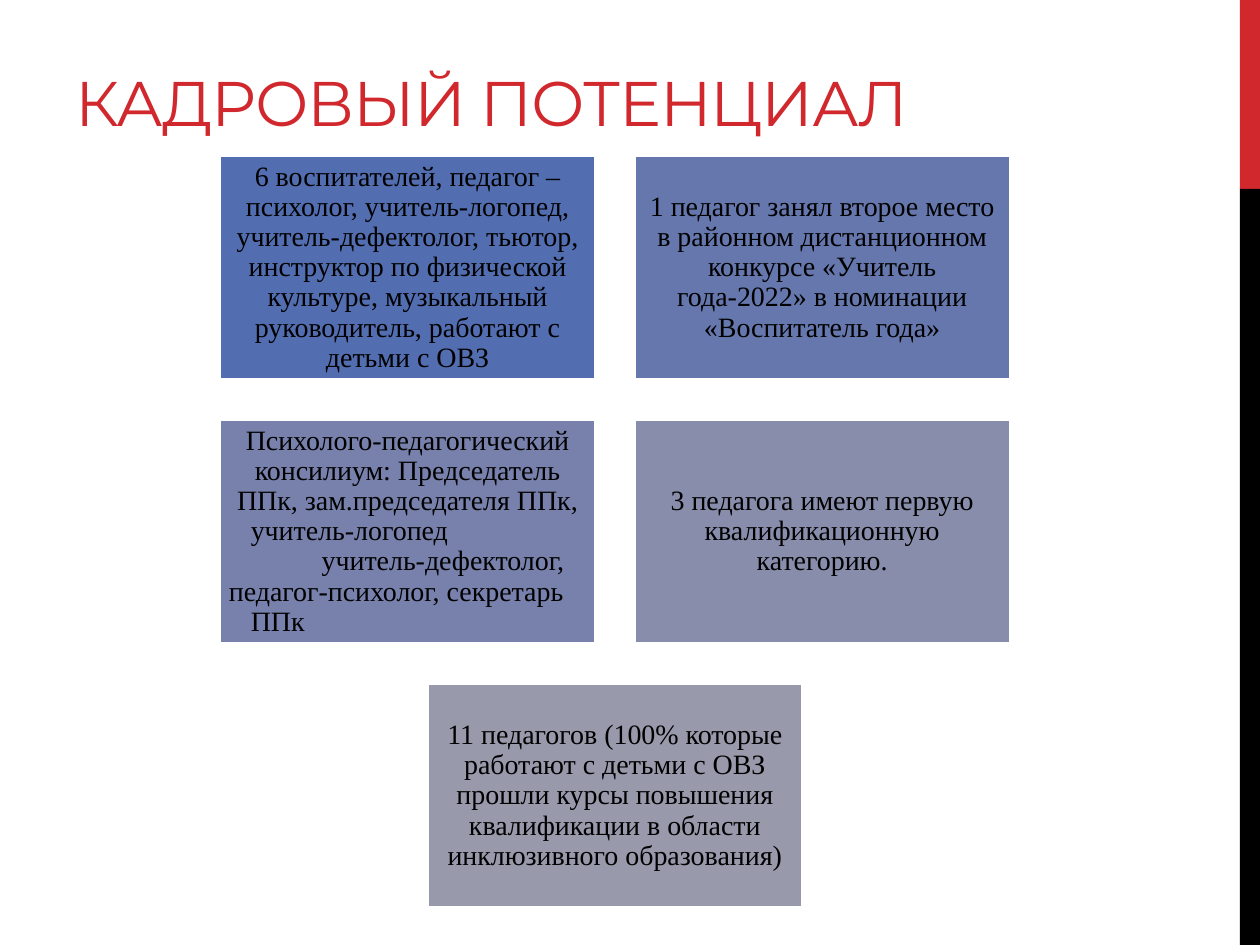
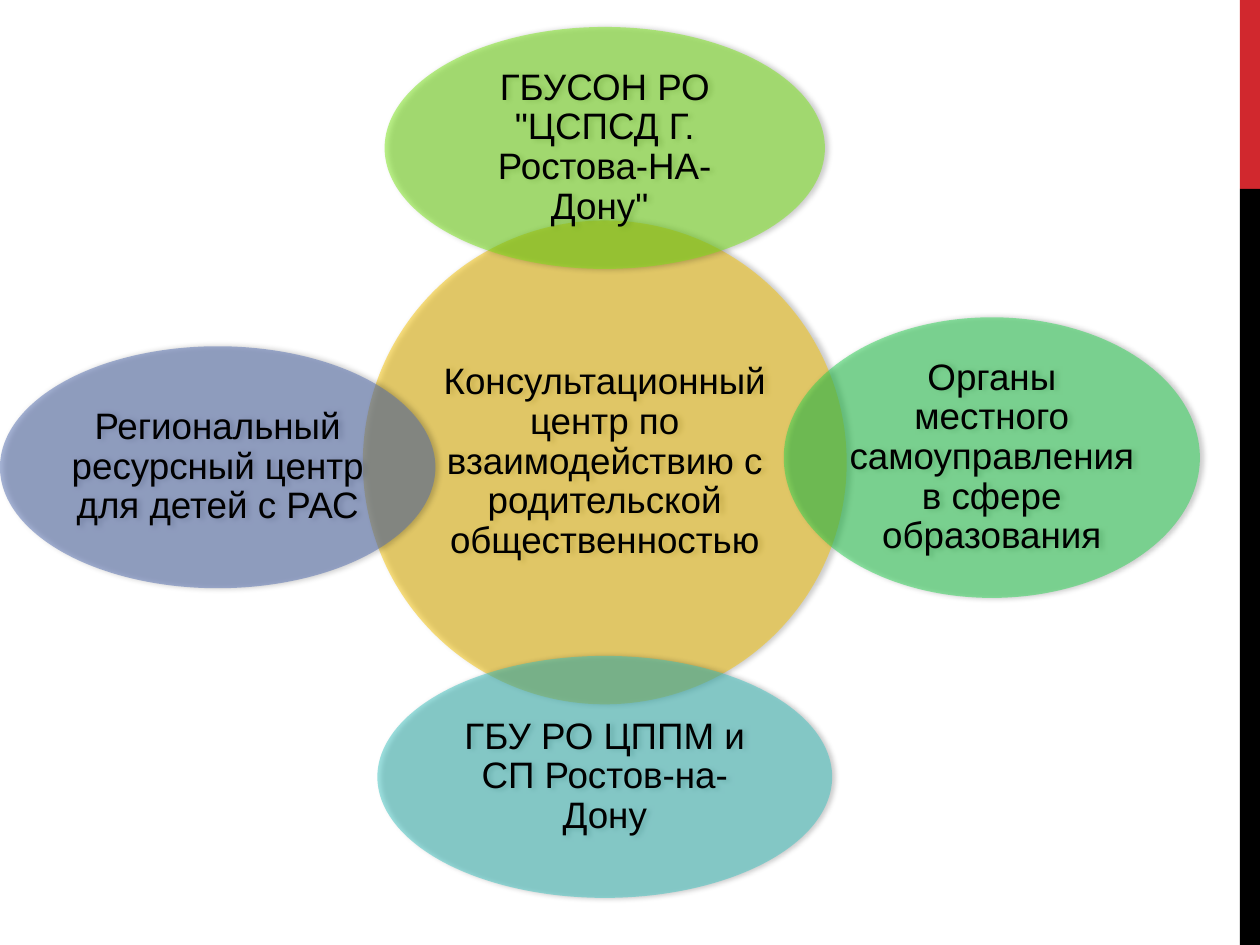
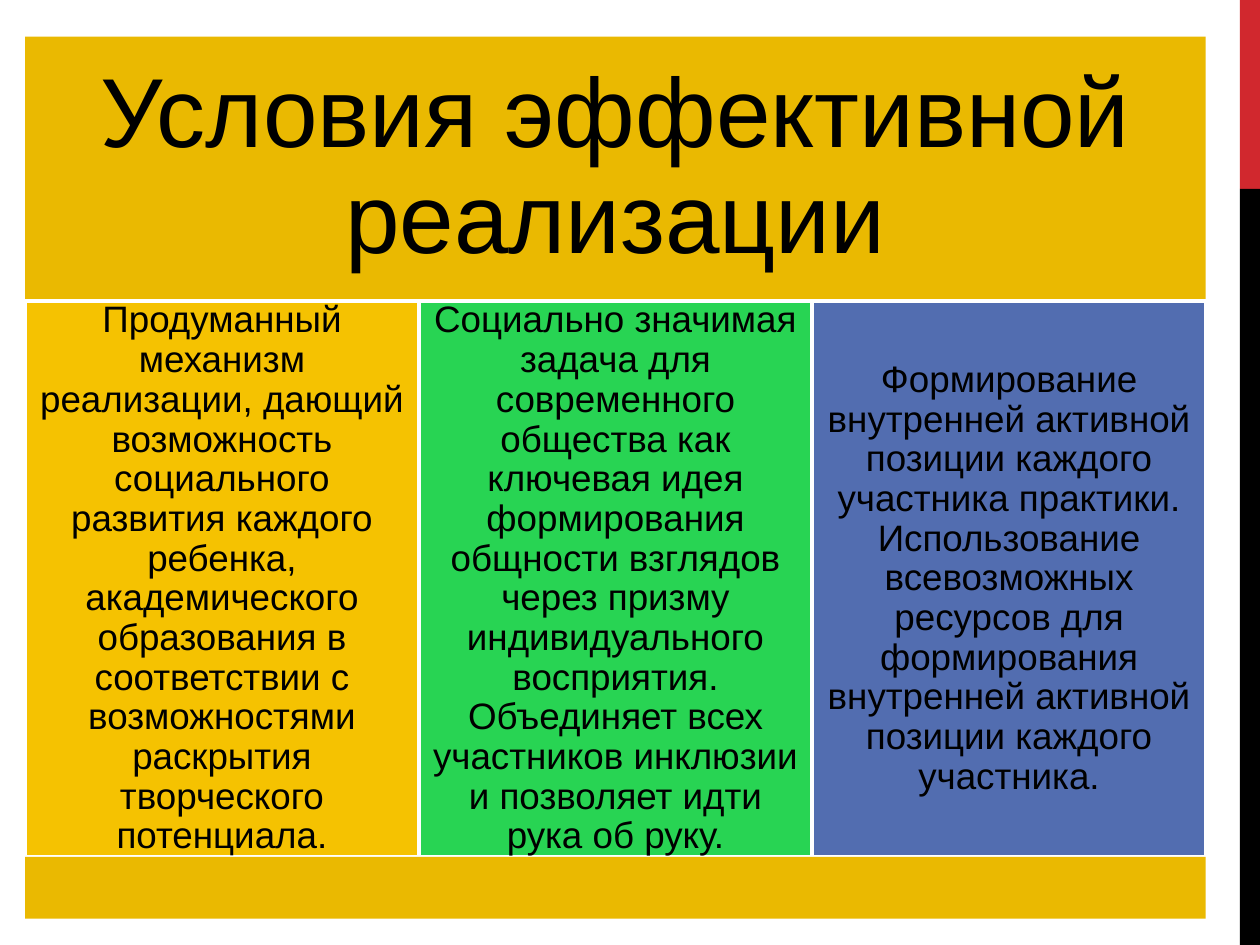
from dataclasses import dataclass

from lxml import etree
from pptx import Presentation
from pptx.dml.color import RGBColor
from pptx.enum.shapes import MSO_SHAPE
from pptx.enum.text import MSO_ANCHOR, PP_ALIGN
from pptx.oxml.ns import qn
from pptx.util import Inches, Pt

RECTANGLE, OVAL = MSO_SHAPE.RECTANGLE, MSO_SHAPE.OVAL
MIDDLE, BOTTOM = MSO_ANCHOR.MIDDLE, MSO_ANCHOR.BOTTOM
CENTER, LEFT, RIGHT = PP_ALIGN.CENTER, PP_ALIGN.LEFT, PP_ALIGN.RIGHT

RED = RGBColor(0xD1, 0x28, 0x2E)
BLACK = RGBColor(0x00, 0x00, 0x00)
WHITE = RGBColor(0xFF, 0xFF, 0xFF)
GOLD = RGBColor(0xF5, 0xC2, 0x01)
DARK_GOLD = RGBColor(0xEA, 0xB9, 0x01)
LIME = RGBColor(0x78, 0xE5, 0x14)
GREEN = RGBColor(0x28, 0xD4, 0x53)
TEAL = RGBColor(0x3C, 0xC3, 0xC0)
BLUE = RGBColor(0x52, 0x6D, 0xB0)
BLUE_2 = RGBColor(0x65, 0x77, 0xAD)
BLUE_3 = RGBColor(0x77, 0x81, 0xAC)
BLUE_4 = RGBColor(0x88, 0x8D, 0xAB)
BLUE_5 = RGBColor(0x98, 0x9A, 0xAC)

TITLE_FONT, CARD_FONT, BODY_FONT = "Montserrat", "Times New Roman", "Arial"
SIDE_INDENT = 0.18


@dataclass
class Box:
    left: float
    top: float
    width: float
    height: float

    def share(self, x, y, width, height):
        return Box(self.left + x * self.width, self.top + y * self.height,
                   width * self.width, height * self.height)

    def lengths(self):
        return [Inches(v) for v in (self.left, self.top, self.width, self.height)]


PAGE = Box(0, 0, 10, 7.5)

STAFF_CARDS = [
    (0, 0, BLUE, [("6 воспитателей, педагог –психолог, учитель-логопед, "
                   "учитель-дефектолог, тьютор, инструктор по физической культуре, "
                   "музыкальный руководитель, работают с детьми с ОВЗ", CENTER)]),
    (1, 0, BLUE_2, [("1 педагог занял второе место в районном дистанционном конкурсе "
                     "«Учитель года-2022» в номинации «Воспитатель года»", CENTER)]),
    (0, 1, BLUE_3, [("Психолого-педагогический консилиум: Председатель ППк, "
                     "зам.председателя ППк,", CENTER),
                    ("учитель-логопед", LEFT),
                    ("учитель-дефектолог,", RIGHT),
                    ("педагог-психолог, секретарь", CENTER),
                    ("ППк", LEFT)]),
    (1, 1, BLUE_4, [("3 педагога имеют первую квалификационную категорию.", CENTER)]),
    (0.5, 2, BLUE_5, [("11 педагогов (100% которые работают с детьми с ОВЗ прошли курсы "
                       "повышения квалификации в области инклюзивного образования)", CENTER)]),
]

HUB_TEXT = "Консультационный центр по взаимодействию с родительской общественностью"
PARTNERS = [
    (0, -0.65, 0.91, 0.5, LIME, 'ГБУСОН РО "ЦСПСД Г. Ростова-НА-Дону"\u00a0'),
    (0.8, -0.01, 0.86, 0.58, GREEN, "Органы местного самоуправления в сфере образования"),
    (0, 0.65, 0.94, 0.5, TEAL, "ГБУ РО ЦППМ и СП Ростов-на-Дону"),
    (-0.8, 0.01, 0.9, 0.5, BLUE, "Региональный ресурсный центр для детей с РАС"),
]

CONDITIONS = [
    (GOLD, "Продуманный механизм реализации, дающий возможность социального развития "
           "каждого ребенка, академического образования в соответствии с возможностями "
           "раскрытия творческого потенциала."),
    (GREEN, "Социально значимая задача для современного общества как ключевая идея "
            "формирования общности взглядов через призму индивидуального восприятия. "
            "Объединяет всех участников инклюзии и позволяет идти рука об руку."),
    (BLUE, "Формирование внутренней активной позиции каждого участника практики. "
           "Использование всевозможных ресурсов для формирования внутренней активной "
           "позиции каждого участника."),
]


def add_block(page, box, fill, preset=RECTANGLE, outline=None):
    block = page.shapes.add_shape(preset, *box.lengths())
    block.shadow.inherit = False
    block.fill.solid()
    block.fill.fore_color.rgb = fill
    if outline is None:
        block.line.fill.background()
    else:
        block.line.color.rgb = outline
        block.line.width = Pt(2.25)
    return block


def set_frame(shape, anchor, inset):
    frame = shape.text_frame
    frame.word_wrap = True
    frame.vertical_anchor = anchor
    frame.margin_left = frame.margin_right = Inches(inset)
    frame.margin_top = frame.margin_bottom = Inches(inset)
    return frame


def add_span(para, text, font, size, color=BLACK):
    span = para.add_run()
    span.text = text
    span.font.name = font
    span.font.size = Pt(size)
    span.font.color.rgb = color
    return span


def write(shape, lines, font, size, inset):
    frame = set_frame(shape, MIDDLE, inset)
    for index, (text, alignment) in enumerate(lines):
        para = frame.add_paragraph() if index else frame.paragraphs[0]
        para.alignment = alignment
        para.line_spacing = 0.9
        if alignment != CENTER:
            side = "marL" if alignment == LEFT else "marR"
            para._p.get_or_add_pPr().set(side, str(Inches(SIDE_INDENT)))
        add_span(para, text, font, size)


def add_page(deck):
    page = deck.slides.add_slide(deck.slide_layouts[6])
    add_block(page, PAGE.share(0.984, 0, 0.016, 0.2), RED)
    add_block(page, PAGE.share(0.984, 0.2, 0.016, 0.8), BLACK)
    return page


def add_title(page, box, text):
    title = page.shapes.add_textbox(*box.lengths())
    frame = set_frame(title, BOTTOM, 0.1)
    frame.margin_top = frame.margin_bottom = Inches(0.05)
    span = add_span(frame.paragraphs[0], text, TITLE_FONT, 36, RED)
    span.font._element.set("spc", "-60")


def add_staff_cards(page, box):
    width, height = 0.476, 0.299
    column_step, row_step = 1 - width, (1 - height) / 2
    for column, row, fill, lines in STAFF_CARDS:
        place = box.share(column * column_step, row * row_step, width, height)
        card = add_block(page, place, fill, outline=WHITE)
        write(card, lines, CARD_FONT, 16, 0.07)


def add_glass_oval(page, box, fill, text):
    oval = add_block(page, box, fill, OVAL)
    properties = oval._element.spPr
    tint = properties.find(qn("a:solidFill"))[0]
    etree.SubElement(tint, qn("a:alpha"), val="50000")
    shadow = etree.SubElement(properties.find(qn("a:effectLst")), qn("a:outerShdw"),
                              blurRad=str(Pt(3.1)), dist=str(Pt(1.8)), dir="0",
                              rotWithShape="0")
    shade = etree.SubElement(shadow, qn("a:srgbClr"), val=str(BLACK))
    etree.SubElement(shade, qn("a:alpha"), val="40000")
    write(oval, [(text, CENTER)], BODY_FONT, 21, 0.02)


def add_partner_ring(page, hub):
    add_glass_oval(page, hub, GOLD, HUB_TEXT)
    for across, down, width, height, fill, text in PARTNERS:
        place = hub.share(0.5 + across - width / 2, 0.5 + down - height / 2, width, height)
        add_glass_oval(page, place, fill, text)


def add_conditions(page, box):
    header = add_block(page, box.share(0, 0, 1, 0.3), DARK_GOLD)
    write(header, [("Условия эффективной реализации", CENTER)], BODY_FONT, 56, 0.23)
    width = 1 / len(CONDITIONS)
    for index, (fill, text) in enumerate(CONDITIONS):
        column = add_block(page, box.share(index * width, 0.3, width, 0.63), fill,
                           outline=WHITE)
        write(column, [(text, CENTER)], BODY_FONT, 21, 0.09)
    add_block(page, box.share(0, 0.93, 1, 0.07), DARK_GOLD)


def main():
    deck = Presentation()
    deck.slide_width, deck.slide_height = Inches(PAGE.width), Inches(PAGE.height)

    staff = add_page(deck)
    add_title(staff, Box(0.5, 0.17, 9.3, 0.98), "КАДРОВЫЙ ПОТЕНЦИАЛ")
    add_staff_cards(staff, Box(1.74, 1.23, 6.28, 5.98))

    add_partner_ring(add_page(deck), Box(2.88, 1.75, 3.84, 3.84))

    add_conditions(add_page(deck), Box(0.2, 0.29, 9.37, 7))
    deck.save("out.pptx")


if __name__ == "__main__":
    main()
